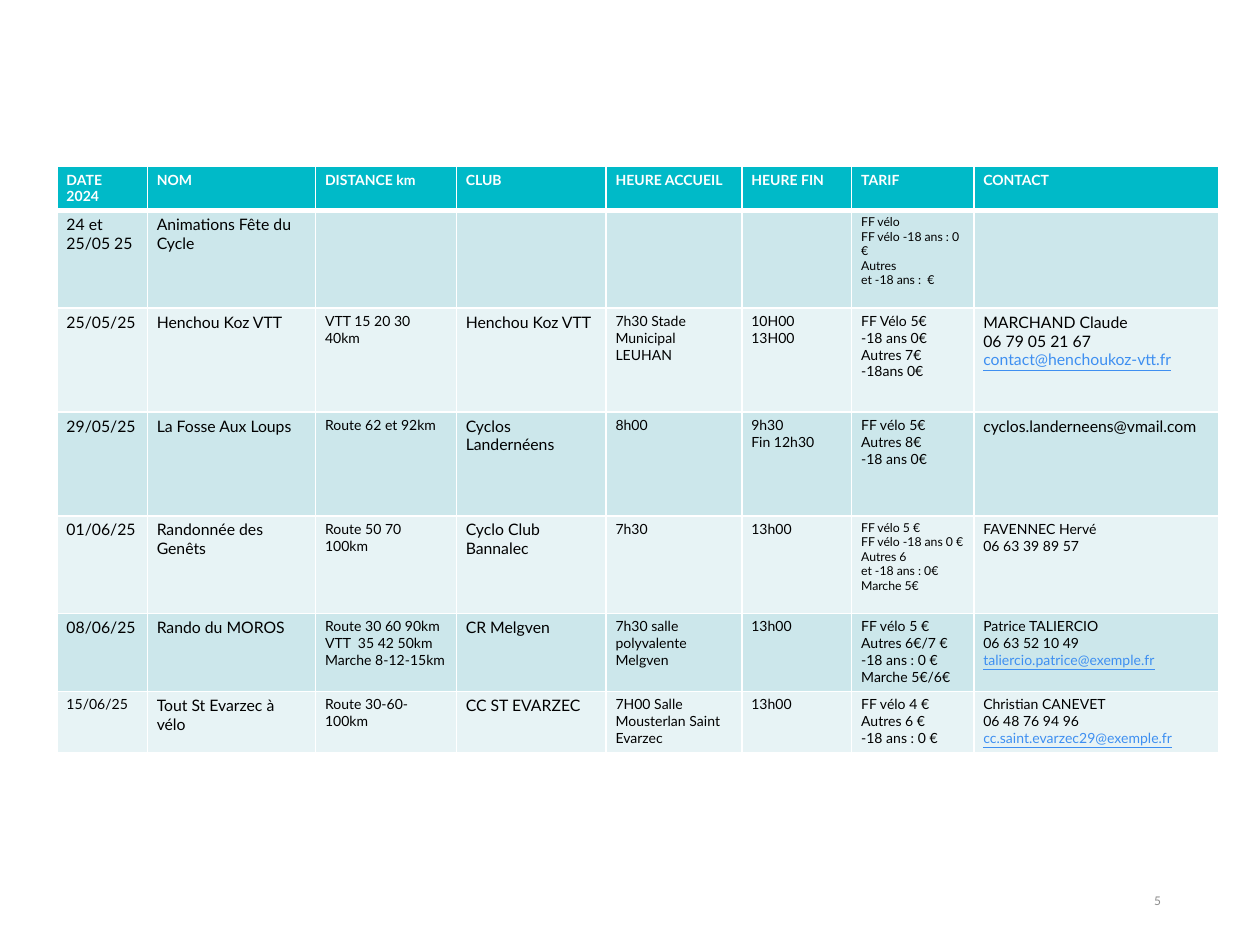
from dataclasses import dataclass

from lxml import etree
from pptx import Presentation
from pptx.dml.color import RGBColor
from pptx.enum import text
from pptx.oxml import ns
from pptx.util import Pt


@dataclass(frozen=True)
class Theme:
    """Fonts, colours and type sizes of the slide."""
    font: str = "Lato"
    header: str = "00BAC8"
    bands: tuple = ("CCE7EB", "E7F3F5")
    white: str = "FFFFFF"
    ink: str = "000000"
    link: str = "3E8FF1"
    muted: str = "8C8C8C"
    large: float = 9
    body: float = 8
    small: float = 7
    number: float = 6.8


T = Theme()
COL_WIDTHS = (51.6, 96.2, 80.4, 85.6, 77.6, 62.8, 69.8, 140)
ROW_HEIGHTS = (25, 55.8, 59.4, 59.4, 55.8, 44.6, 35.2)
COL_SIZES = (T.large, T.large, T.body, T.large, T.body, T.body, T.body, T.body)
SIZE_EXCEPTIONS = {(1, 6): T.small, (4, 6): T.small, (6, 0): T.body,
                   (2, 7): T.large, (3, 7): T.large}
LINKS = ("contact@henchoukoz-vtt.fr", "taliercio.patrice@exemple.fr",
         "cc.saint.evarzec29@exemple.fr")
ROWS = (
    ("DATE 2024", "NOM", "DISTANCE km", "CLUB", "HEURE ACCUEIL", "HEURE FIN",
     "TARIF", "CONTACT"),
    ("24 et 25/05 25", "Animations Fête du Cycle", "", "", "", "",
     "FF vélo\nFF vélo -18 ans : 0 €\nAutres\net -18 ans :  €", ""),
    ("25/05/25", "Henchou Koz VTT", "VTT 15 20 30 40km", "Henchou Koz VTT",
     "7h30 Stade Municipal LEUHAN", "10H00\n13H00",
     "FF Vélo 5€\n-18 ans 0€\nAutres 7€\n-18ans 0€",
     f"MARCHAND Claude\n06 79 05 21 67\n{LINKS[0]}"),
    ("29/05/25", "La Fosse Aux Loups", "Route 62 et 92km",
     "Cyclos Landernéens", "8h00", "9h30\nFin 12h30",
     "FF vélo 5€\nAutres 8€\n-18 ans 0€", "cyclos.landerneens@vmail.com"),
    ("01/06/25", "Randonnée des Genêts", "Route 50 70 100km",
     "Cyclo Club Bannalec", "7h30", "13h00",
     "FF vélo 5 €\nFF vélo -18 ans 0 €\nAutres 6\net -18 ans : 0€\nMarche 5€",
     "FAVENNEC Hervé\n06 63 39 89 57"),
    ("08/06/25", "Rando du MOROS",
     "Route 30 60 90km\nVTT  35 42 50km\nMarche 8-12-15km", "CR Melgven",
     "7h30 salle polyvalente Melgven", "13h00",
     "FF vélo 5 €\nAutres 6€/7 €\n-18 ans : 0 €\nMarche 5€/6€",
     f"Patrice TALIERCIO\n06 63 52 10 49\n{LINKS[1]}"),
    ("15/06/25", "Tout St Evarzec à vélo", "Route 30-60-100km",
     "CC ST EVARZEC", "7H00 Salle Mousterlan Saint Evarzec", "13h00",
     "FF vélo 4 €\nAutres 6 €\n-18 ans : 0 €",
     f"Christian CANEVET\n06 48 76 94 96\n{LINKS[2]}"),
)


def set_attrs(obj, values):
    """Set each named attribute of an object."""
    for name, value in values.items():
        setattr(obj, name, value)


def write_lines(tf, content, size, color, bold=False):
    """Write one paragraph per line, underlining the links."""
    for i, line in enumerate(content.split("\n")):
        p = tf.paragraphs[0] if i == 0 else tf.add_paragraph()
        is_link = line in LINKS
        set_attrs(p.font, {"size": Pt(size), "name": T.font})
        if line:
            r = p.add_run()
            r.text = line
            set_attrs(r.font, {"name": T.font, "size": Pt(size), "bold": bold,
                               "underline": is_link})
            r.font.color.rgb = RGBColor.from_string(T.link if is_link else color)


def set_borders(cell, widths):
    """Draw white borders, given widths keyed by side."""
    tc_pr = cell._tc.get_or_add_tcPr()
    for i, (side, width) in enumerate(widths.items()):
        ln = etree.Element(ns.qn(f"a:ln{side}"), w=str(Pt(width)))
        fill = etree.SubElement(ln, ns.qn("a:solidFill"))
        etree.SubElement(fill, ns.qn("a:srgbClr"), val=T.white)
        tc_pr.insert(i, ln)


def fill_cell(cell, row, col, content):
    """Format and fill one cell of the calendar."""
    is_header = row == 0
    set_attrs(cell, {"margin_left": Pt(5.4), "margin_right": Pt(5.4),
                     "margin_top": Pt(2.7), "margin_bottom": Pt(2.7)})
    cell.fill.solid()
    band = T.header if is_header else T.bands[(row - 1) % 2]
    cell.fill.fore_color.rgb = RGBColor.from_string(band)
    set_borders(cell, {"L": 1, "R": 1, "T": 3 if row == 1 else 1,
                       "B": 3 if is_header else 1})
    size = T.body if is_header else SIZE_EXCEPTIONS.get((row, col), COL_SIZES[col])
    write_lines(cell.text_frame, content, size,
                T.white if is_header else T.ink, is_header)


def add_calendar(slide):
    """Add the table of rides."""
    table = slide.shapes.add_table(
        len(ROWS), len(COL_WIDTHS), Pt(32.6), Pt(95.2),
        Pt(sum(COL_WIDTHS)), Pt(sum(ROW_HEIGHTS))).table
    for column, width in zip(table.columns, COL_WIDTHS):
        column.width = Pt(width)
    for row, height in zip(table.rows, ROW_HEIGHTS):
        row.height = Pt(height)
    for i, values in enumerate(ROWS):
        for j, content in enumerate(values):
            fill_cell(table.cell(i, j), i, j, content)


def add_page_number(slide, number):
    """Add the page number at the lower right."""
    tf = slide.shapes.add_textbox(Pt(508.5), Pt(500.5), Pt(162), Pt(28.8)).text_frame
    set_attrs(tf, {"word_wrap": True, "vertical_anchor": text.MSO_ANCHOR.MIDDLE})
    write_lines(tf, number, T.number, T.muted)
    tf.paragraphs[0].alignment = text.PP_ALIGN.RIGHT


def main():
    """Build and save the slide."""
    prs = Presentation()
    set_attrs(prs, {"slide_width": Pt(720), "slide_height": Pt(540)})
    slide = prs.slides.add_slide(prs.slide_layouts[6])
    add_calendar(slide)
    add_page_number(slide, "5")
    prs.save("out.pptx")


if __name__ == "__main__":
    main()
